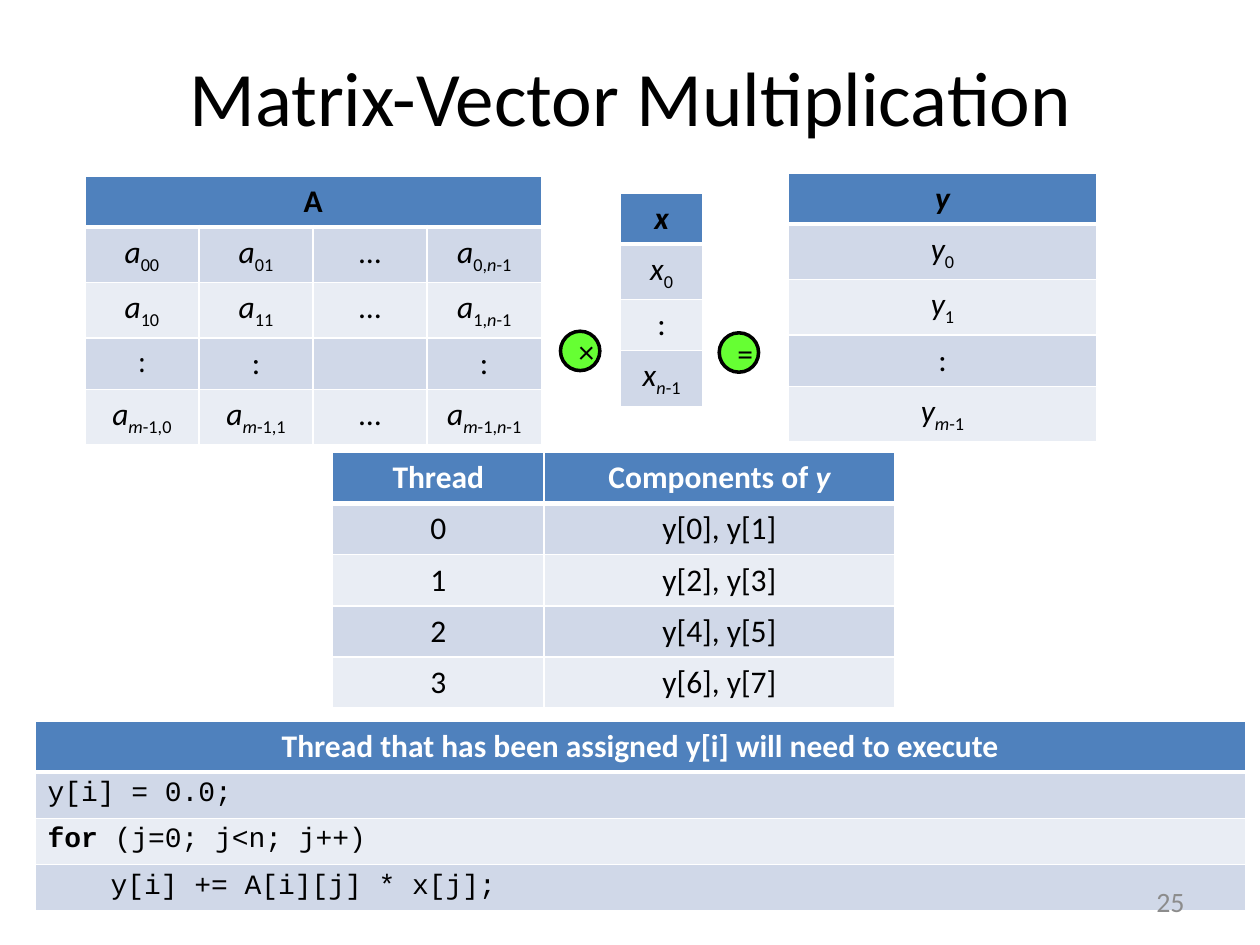
from dataclasses import dataclass
from itertools import groupby
from typing import NamedTuple

from lxml import etree
from pptx import Presentation
from pptx import util as u
from pptx.dml.color import RGBColor
from pptx.enum import shapes, text
from pptx.oxml.ns import qn

BLACK, WHITE, GREY = "000000", "FFFFFF", "8C8C8C"
HEADER, BANDS = "4F81BD", ("D0D8E8", "E9EDF4")
GREEN = "66FF33"
BODY, CODE = "Calibri", "Courier New"
LEFT, CENTER, RIGHT = text.PP_ALIGN.LEFT, text.PP_ALIGN.CENTER, text.PP_ALIGN.RIGHT
HEADER_HEIGHT = 29.2


class Run(NamedTuple):
    words: str
    italic: bool = False
    bold: bool = False
    subscript: bool = False
    font: str | None = None


@dataclass
class Grid:
    left: float
    top: float
    widths: list[float]
    header: list[list[Run]]
    body: list[list[list[Run]]]
    header_color: str = BLACK
    row_height: float = HEADER_HEIGHT
    body_size: float = 18
    body_font: str = BODY
    body_align: text.PP_ALIGN = CENTER


@dataclass
class Operator:
    left: float
    top: float
    symbol: str


def color(value: str) -> RGBColor:
    return RGBColor.from_string(value)


def plain(words: str) -> list[Run]:
    return [Run(words)]


def indexed(symbol: str, index: str) -> list[Run]:
    """Italic symbol with a subscript whose letters are italic too."""
    parts = groupby(index, key=str.isalpha)
    return [Run(symbol, italic=True)] + [
        Run("".join(chars), italic=letters, subscript=True) for letters, chars in parts]


def write(frame, runs: list[Run], *, size: float = 18, font: str = BODY, fill: str = BLACK,
          bold: bool = False, align: text.PP_ALIGN = CENTER) -> None:
    paragraph = frame.paragraphs[0]
    paragraph.alignment = align
    for part in runs:
        run = paragraph.add_run()
        run.text = part.words
        run.font.size = u.Pt(size)
        run.font.name = part.font or font
        run.font.bold = bold or part.bold
        run.font.italic = part.italic
        run.font.color.rgb = color(fill)
        if part.subscript:
            run.font._element.set("baseline", "-25000")


def set_borders(cell, top: float, bottom: float) -> None:
    properties = cell._tc.get_or_add_tcPr()
    for side, width in (("L", 1), ("R", 1), ("T", top), ("B", bottom)):
        line = etree.SubElement(properties, qn(f"a:ln{side}"), w=str(u.Pt(width)))
        solid = etree.SubElement(line, qn("a:solidFill"))
        etree.SubElement(solid, qn("a:srgbClr"), val=WHITE)


def draw_grid(slide, grid: Grid) -> None:
    rows = [grid.header] + grid.body
    heights = [HEADER_HEIGHT] + [grid.row_height] * len(grid.body)
    table = slide.shapes.add_table(
        len(rows), len(grid.widths), u.Pt(grid.left), u.Pt(grid.top),
        u.Pt(sum(grid.widths)), u.Pt(sum(heights))).table
    for column, width in zip(table.columns, grid.widths):
        column.width = u.Pt(width)
    for r, (cells, height) in enumerate(zip(rows, heights)):
        table.rows[r].height = u.Pt(height)
        for c in range(len(grid.widths)):
            cell = table.cell(r, c)
            set_borders(cell, 3 if r == 1 else 1, 3 if r == 0 else 1)
            cell.fill.solid()
            cell.fill.fore_color.rgb = color(BANDS[(r - 1) % 2] if r else HEADER)
        for c, runs in enumerate(cells):
            frame = table.cell(r, c).text_frame
            if r == 0:
                write(frame, runs, fill=grid.header_color, bold=True)
            else:
                write(frame, runs, size=grid.body_size, font=grid.body_font,
                      align=grid.body_align)
    # A single heading spans all columns
    if len(grid.header) < len(grid.widths):
        table.cell(0, 0).merge(table.cell(0, len(grid.widths) - 1))


def draw_operator(slide, operator: Operator) -> None:
    circle = slide.shapes.add_shape(
        shapes.MSO_SHAPE.OVAL, u.Pt(operator.left), u.Pt(operator.top), u.Pt(22.5), u.Pt(22.5))
    circle.shadow.inherit = False
    circle.fill.solid()
    circle.fill.fore_color.rgb = color(GREEN)
    circle.line.color.rgb = color(BLACK)
    circle.line.width = u.Pt(2)
    circle.text_frame.vertical_anchor = text.MSO_ANCHOR.MIDDLE
    write(circle.text_frame, plain(operator.symbol))


def draw_label(slide, words: str, left: float, top: float, width: float, height: float,
               **style) -> None:
    label = slide.shapes.add_textbox(u.Pt(left), u.Pt(top), u.Pt(width), u.Pt(height))
    label.text_frame.word_wrap = True
    label.text_frame.vertical_anchor = text.MSO_ANCHOR.MIDDLE
    write(label.text_frame, plain(words), **style)


def matrix_row(row: str) -> list[list[Run]]:
    comma = "," if row.startswith("m") else ""
    return [indexed("a", f"{row}{comma}0"), indexed("a", f"{row}{comma}1"),
            plain("…"), indexed("a", f"{row},n-1")]


DOTS = plain(":")

matrix = Grid(48.5, 100.5, [65.2] * 4, [plain("A")], [
    matrix_row("0"), matrix_row("1"),
    [[Run(":", font="Cambria")], DOTS, [], DOTS],
    matrix_row("m-1")])
vector = Grid(354.5, 110.2, [47.2], [[Run("x", italic=True)]],
              [[indexed("x", "0")], [DOTS], [indexed("x", "n-1")]])
product = Grid(450.6, 98.8, [176], [[Run("y", italic=True)]],
               [[indexed("y", "0")], [indexed("y", "1")], [DOTS], [indexed("y", "m-1")]])
assignment = Grid(
    190, 258.6, [121, 200.2],
    [plain("Thread"), [Run("Components of "), Run("y", italic=True)]],
    [[plain(str(t)), plain(f"y[{2 * t}], y[{2 * t + 1}]")] for t in range(4)],
    header_color=WHITE)
code = Grid(
    20, 412, [692], [plain("Thread that has been assigned y[i] will need to execute")],
    [[plain("y[i] = 0.0;")],
     [[Run("for ", bold=True), Run("(j=0; j<n; j++)")]],
     [plain("\ty[i] += A[i][j] * x[j];")]],
    header_color=WHITE, row_height=25, body_size=16, body_font=CODE, body_align=LEFT)
operators = [Operator(320.3, 189.3, "×"), Operator(411, 190.2, "=")]


def main() -> None:
    deck = Presentation()
    deck.slide_width, deck.slide_height = u.Pt(720), u.Pt(540)
    slide = deck.slides.add_slide(deck.slide_layouts[6])

    # Title
    draw_label(slide, "Matrix-Vector Multiplication", 36.5, 9.5, 648, 90, size=44)
    # Equation, thread assignment and code
    for grid in (assignment, matrix, vector, product, code):
        draw_grid(slide, grid)
    for operator in operators:
        draw_operator(slide, operator)
    # Page number
    draw_label(slide, "25", 516, 500.5, 168, 28.8, size=16, fill=GREY, align=RIGHT)

    deck.save("out.pptx")


if __name__ == "__main__":
    main()
